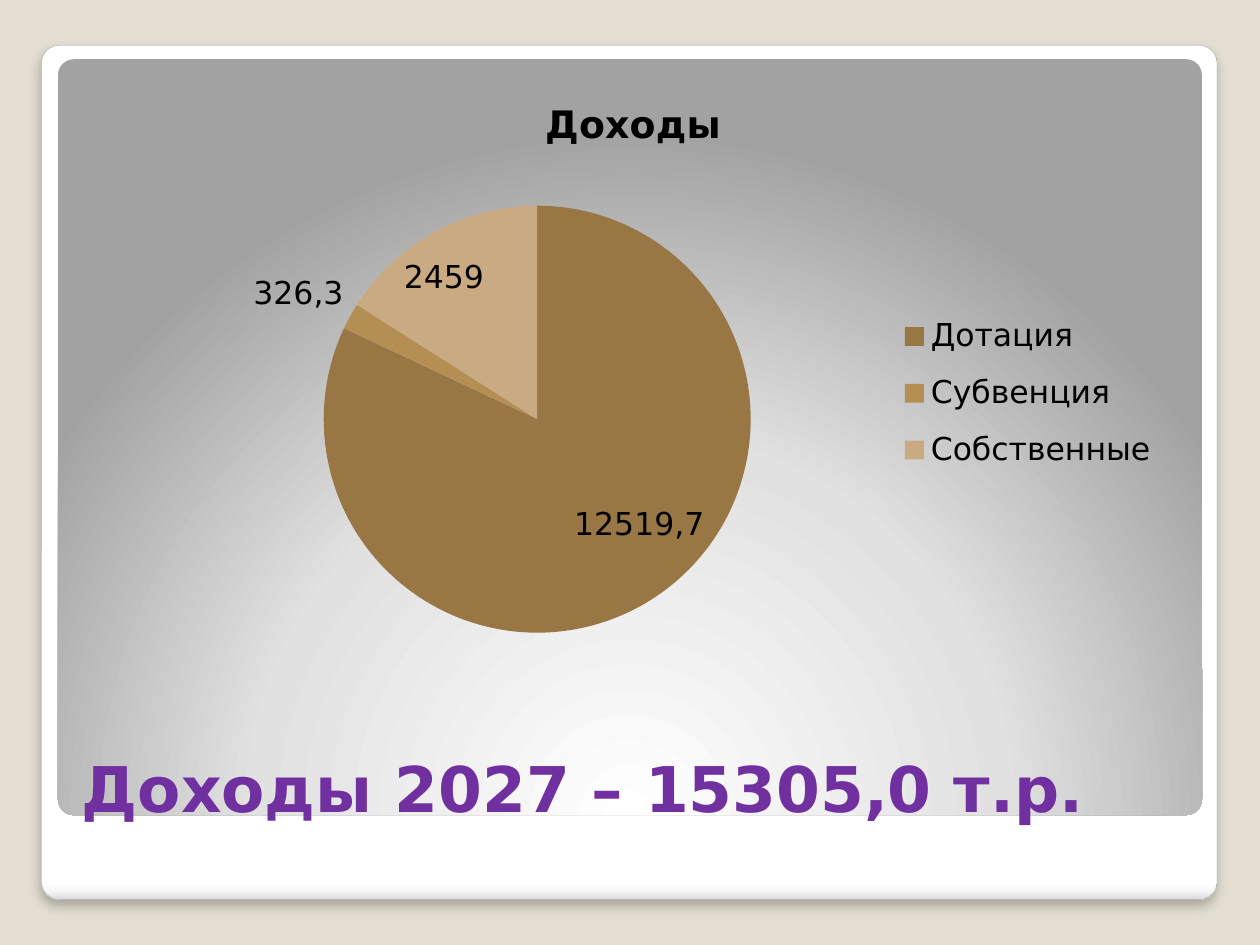
from lxml import etree
from pptx import Presentation
from pptx import util as u
from pptx.chart.data import CategoryChartData
from pptx.dml.color import RGBColor
from pptx.enum import chart as charts, shapes, text
from pptx.oxml import parse_xml
from pptx.oxml.ns import nsdecls, qn

BACKGROUND = RGBColor(0xE3, 0xDE, 0xD1)
FRAME_LINE = RGBColor(0xA4, 0xA4, 0xA4)
PURPLE = RGBColor(0x70, 0x30, 0xA0)
BLACK = RGBColor(0, 0, 0)
SLICES = [RGBColor(0x98, 0x77, 0x45), RGBColor(0xB5, 0x8E, 0x53), RGBColor(0xCA, 0xAA, 0x82)]
FONT = "DejaVu Sans"

presentation = Presentation()
presentation.slide_width = u.Inches(10)
presentation.slide_height = u.Inches(7.5)
slide = presentation.slides.add_slide(presentation.slide_layouts[6])
slide.background.fill.solid()
slide.background.fill.fore_color.rgb = BACKGROUND


def add_panel(box, stops, direction):
    shape = slide.shapes.add_shape(
        shapes.MSO_SHAPE.ROUNDED_RECTANGLE, *[u.Inches(value) for value in box])
    shape.adjustments[0] = 0.021
    shape.shadow.inherit = False
    shape.line.fill.background()
    shape.fill.background()
    stop_xml = "".join(
        f'<a:gs pos="{position * 1000}"><a:srgbClr val="{color}"/></a:gs>'
        for position, color in stops)
    gradient = parse_xml(
        f'<a:gradFill {nsdecls("a")} rotWithShape="1"><a:gsLst>{stop_xml}</a:gsLst>'
        f'{direction}</a:gradFill>')
    properties = shape.element.spPr
    properties.replace(properties.find(qn("a:noFill")), gradient)
    return shape


def set_layout(parent, position, target, x, y, w, h):
    for old_layout in parent.findall(qn("c:layout")):
        parent.remove(old_layout)
    layout = etree.Element(qn("c:layout"))
    manual = etree.SubElement(layout, qn("c:manualLayout"))
    settings = target + [("xMode", "edge"), ("yMode", "edge"), ("x", x), ("y", y), ("w", w), ("h", h)]
    for name, value in settings:
        etree.SubElement(manual, qn("c:" + name)).set("val", str(value))
    parent.insert(position, layout)


frame = add_panel(
    (0.33, 0.36, 9.33, 6.78),
    [(0, "FFFFFF"), (98, "FFFFFF"), (99, "F7F7F7"), (100, "DADADA")],
    '<a:lin ang="5400000" scaled="0"/>')
frame.line.color.rgb = FRAME_LINE
frame.line.width = u.Pt(0.16)
frame.element.spPr.find(qn("a:effectLst")).append(parse_xml(
    f'<a:outerShdw {nsdecls("a")} blurRad="{u.Pt(6)}" dist="{u.Pt(4)}" dir="5400000" '
    'rotWithShape="0"><a:srgbClr val="000000"><a:alpha val="25000"/></a:srgbClr></a:outerShdw>'))

add_panel(
    (0.46, 0.47, 9.08, 6),
    [(0, "FFFFFF"), (55, "E1E1E1"), (100, "A2A2A2")],
    '<a:path path="circle"><a:fillToRect l="50000" t="175000" r="50000" b="-75000"/></a:path>')

left, width = u.Inches(0.55), u.Inches(8.95)
title = slide.shapes.add_textbox(left, u.Inches(5.45), width, u.Inches(1.15))
title.text_frame.word_wrap = True
title.text_frame.vertical_anchor = text.MSO_ANCHOR.BOTTOM
title.text_frame.text = "Доходы 2027 – 15305,0 т.р."
title_font = title.text_frame.paragraphs[0].runs[0].font
title_font.name = FONT
title_font.size = u.Pt(36)
title_font.bold = True
title_font.color.rgb = PURPLE

data = CategoryChartData()
data.categories = ["Дотация", "Субвенция", "Собственные"]
data.add_series("Series 1", [82, 2, 16, 0])
chart = slide.shapes.add_chart(
    charts.XL_CHART_TYPE.PIE, left, u.Inches(0.58), width, u.Inches(4.58), data).chart
chart.font.name = FONT
chart.font.size = u.Pt(18)
chart.font.color.rgb = BLACK

chart.has_title = True
chart.chart_title.include_in_layout = False
chart.chart_title.text_frame.text = "Доходы"
heading_font = chart.chart_title.text_frame.paragraphs[0].runs[0].font
heading_font.name = FONT
heading_font.size = u.Pt(21.6)
heading_font.bold = True
heading_font.color.rgb = BLACK

plot = chart.plots[0]
plot.vary_by_categories = True
for index, (color, caption) in enumerate(zip(SLICES, ["12519,7", "326,3", "2459"])):
    point = plot.series[0].points[index]
    point.format.fill.solid()
    point.format.fill.fore_color.rgb = color
    point.format.line.fill.background()
    label = point.data_label
    label.text_frame.text = caption
    label.position = charts.XL_LABEL_POSITION.BEST_FIT
    label_font = label.text_frame.paragraphs[0].runs[0].font
    label_font.name = FONT
    label_font.size = u.Pt(18)
    label_font.color.rgb = BLACK
series_labels = plot.series[0].data_labels
series_labels.show_value = False
series_labels.show_percentage = False

chart.has_legend = True
chart.legend.position = charts.XL_LEGEND_POSITION.RIGHT
chart.legend.include_in_layout = False
legend = chart.element.find(".//" + qn("c:legend"))
legend.insert(1, parse_xml(
    f'<c:legendEntry {nsdecls("c")}><c:idx val="3"/><c:delete val="1"/></c:legendEntry>'))
set_layout(legend, 2, [], 0.73, 0.39, 0.24, 0.33)
plot_area = chart.element.find(".//" + qn("c:plotArea"))
set_layout(plot_area, 0, [("layoutTarget", "inner")], 0.22, 0.23, 0.39, 0.74)

presentation.save("out.pptx")
